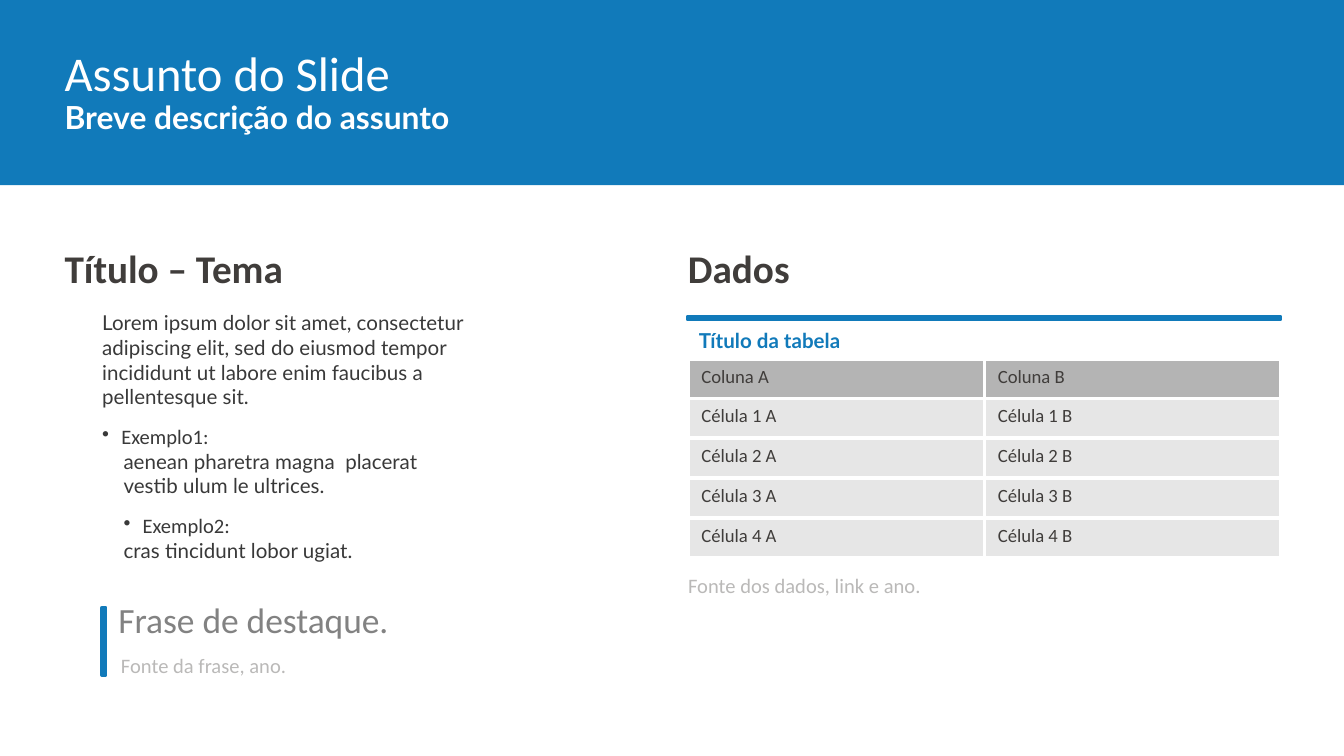
from dataclasses import dataclass

from lxml import etree
from pptx import Presentation
from pptx import util as u
from pptx.dml import color as col
from pptx.enum import shapes, text
from pptx.oxml import ns

Pt = u.Pt


@dataclass(frozen=True)
class Theme:
    # Colours
    blue: str = "117ABA"
    rust: str = "B64A36"
    white: str = "FFFFFF"
    dark: str = "403D3B"
    ink: str = "393939"
    gray: str = "828282"
    pale: str = "BAB9B8"
    head: str = "B4B4B4"
    cell: str = "E6E6E6"
    # Fonts and type sizes
    main: str = "Calibri"
    alt: str = "Lato"
    top: float = 26
    sub: float = 17
    title: float = 21
    quote: float = 19
    body: float = 11
    small: float = 10


def rgb(code):
    return col.RGBColor.from_string(code)


def write(para, words, size, color, font, bold=False, left=0, hang=0, after=0):
    """Put words in a paragraph; a hang above zero adds a bullet."""
    props = para._p.get_or_add_pPr()
    if left or hang:
        props.set("marL", str(Pt(left + hang)))
        props.set("indent", str(Pt(-hang)))
    if hang:
        dot = etree.SubElement(props, ns.qn("a:buChar"))
        dot.set("char", "•")
    para.space_after = Pt(after)
    run = para.add_run()
    run.text = words
    run.font.size, run.font.bold, run.font.name = Pt(size), bold, font
    run.font.color.rgb = rgb(color)


class Deck:
    def __init__(self, theme, wide, high):
        self.theme = theme
        self.file = Presentation()
        self.file.slide_width, self.file.slide_height = Pt(wide), Pt(high)
        self.slide = self.file.slides.add_slide(self.file.slide_layouts[6])

    def bar(self, x, y, w, h, fill, line=None):
        box = self.slide.shapes.add_shape(
            shapes.MSO_SHAPE.RECTANGLE, Pt(x), Pt(y), Pt(w), Pt(h))
        box.shadow.inherit = False
        box.fill.solid()
        box.fill.fore_color.rgb = rgb(fill)
        if line:
            box.line.color.rgb = rgb(line)
            box.line.width = Pt(2)
            etree.SubElement(box.line._get_or_add_ln(), ns.qn("a:round"))
        else:
            box.line.fill.background()

    def frame(self, x, y, w, h):
        area = self.slide.shapes.add_textbox(Pt(x), Pt(y), Pt(w), Pt(h)).text_frame
        area.word_wrap = True
        area.vertical_anchor = text.MSO_ANCHOR.TOP
        area.margin_left = area.margin_right = 0
        area.margin_top = area.margin_bottom = 0
        return area

    def label(self, x, y, w, h, words, **form):
        write(self.frame(x, y, w, h).paragraphs[0], words, **form)

    def prose(self, x, y, w, h, parts, **form):
        area = self.frame(x, y, w, h)
        for n, (words, more) in enumerate(parts):
            para = area.add_paragraph() if n else area.paragraphs[0]
            write(para, words, **{**form, **more})

    def edge(self, cell):
        props = cell._tc.get_or_add_tcPr()
        for side in ("lnL", "lnR", "lnT", "lnB"):
            line = etree.SubElement(props, ns.qn("a:" + side), w=str(Pt(2.25)))
            fill = etree.SubElement(line, ns.qn("a:solidFill"))
            etree.SubElement(fill, ns.qn("a:srgbClr"), val=self.theme.white)

    def table(self, x, y, w, h, rows, **form):
        grid = self.slide.shapes.add_table(
            len(rows), len(rows[0]), Pt(x), Pt(y), Pt(w), Pt(h)).table
        grid.horz_banding = False
        for r, row in enumerate(rows):
            for c, words in enumerate(row):
                cell = grid.cell(r, c)
                self.edge(cell)
                cell.fill.solid()
                cell.fill.fore_color.rgb = rgb(self.theme.cell if r else self.theme.head)
                write(cell.text_frame.paragraphs[0], words, **form)


def main():
    t = Theme()
    deck = Deck(t, 720, 405)
    left, right = 34.6, 368.6

    # Header band
    deck.bar(0, 0, 720, 99.2, t.blue)
    deck.label(left, 23, 241, 30, "Assunto do Slide",
               size=t.top, color=t.white, font=t.main)
    deck.label(left, 52.6, 270, 33, "Breve descrição do assunto",
               size=t.sub, color=t.white, font=t.alt, bold=True)

    # Column titles
    for x, words in ((left, "Título – Tema"), (right, "Dados")):
        deck.label(x, 131, 241, 24.5, words,
                   size=t.title, color=t.dark, font=t.main, bold=True)

    # Body copy with examples
    step = 11.4
    deck.prose(54.8, 166.3, 196.6, 144, [
        ("Lorem ipsum dolor sit amet, consectetur adipiscing elit, sed do eiusmod "
         "tempor incididunt ut labore enim faucibus a pellentesque sit.", {"after": 8}),
        ("Exemplo1:", {"font": t.main, "hang": 10.2}),
        ("aenean pharetra magna  placerat vestib ulum le ultrices.",
         {"left": step, "after": 8}),
        ("Exemplo2:", {"font": t.main, "left": step, "hang": 10.2}),
        ("cras tincidunt lobor ugiat.", {"left": step}),
    ], size=t.body, color=t.ink, font=t.alt)

    # Highlighted quote
    deck.bar(54.6, 325.6, 2, 36, t.rust, t.blue)
    deck.label(63.4, 320.4, 241, 21, "Frase de destaque.",
               size=t.quote, color=t.gray, font=t.main)

    # Sources
    note = dict(size=t.body, color=t.pale, font=t.main)
    deck.label(64.8, 350, 179, 13, "Fonte da frase, ano.", **note)
    deck.label(right, 307, 171, 40, "Fonte dos dados, link e ano.", **note)

    # Data table
    rows = [["Coluna A", "Coluna B"]]
    rows += [[f"Célula {n} {c}" for c in "AB"] for n in range(1, 5)]
    deck.table(right, 192.2, 317.6, 106.6, rows,
               size=t.small, color=t.dark, font=t.main)
    deck.label(374.4, 175.7, 171, 12.5, "Título da tabela",
               size=t.body, color=t.blue, font=t.alt, bold=True)
    deck.bar(368.4, 169.7, 317.6, 1.4, t.blue, t.blue)

    deck.file.save("out.pptx")


if __name__ == "__main__":
    main()
